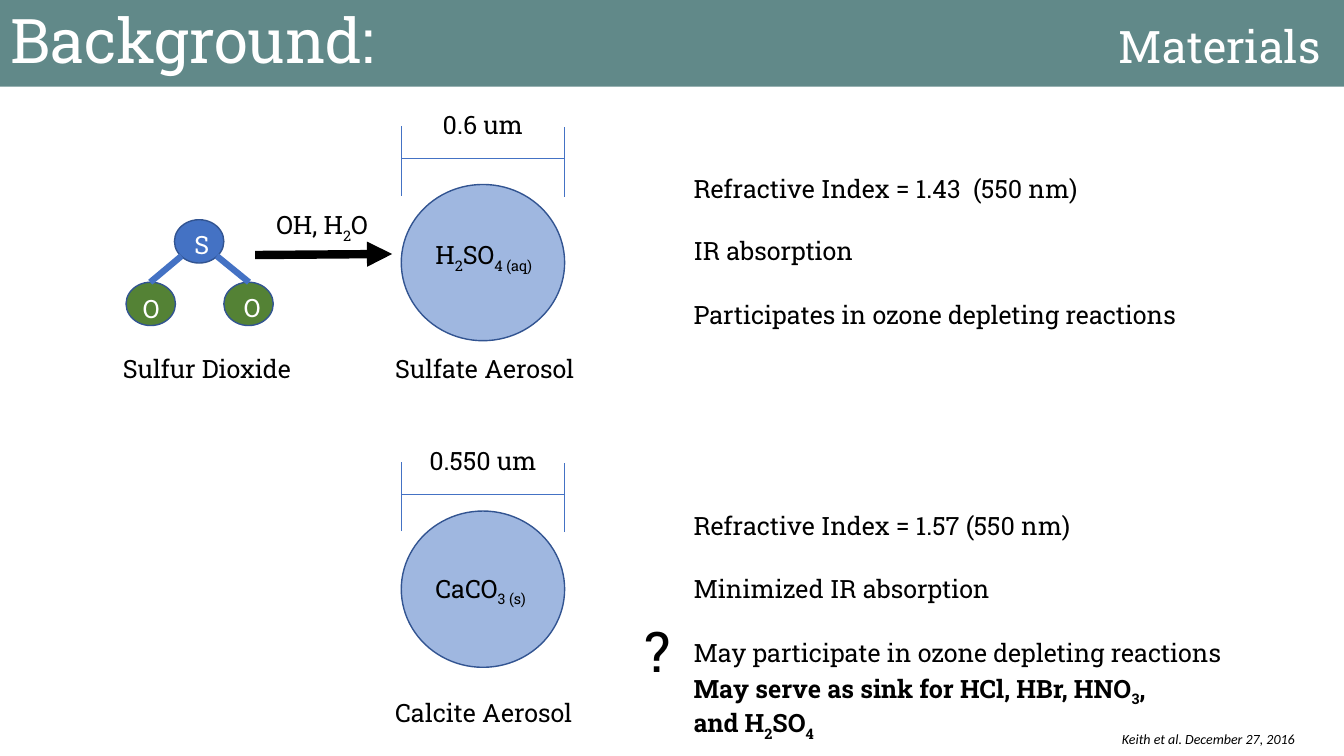
"""Build the slide comparing sulfate and calcite aerosol materials."""
from dataclasses import dataclass, field
from typing import Any

import lxml.etree
import pptx
import pptx.dml.color
import pptx.enum.dml
import pptx.enum.shapes
import pptx.enum.text
import pptx.oxml
import pptx.oxml.ns
import pptx.util

Inches = pptx.util.Inches
Align = pptx.enum.text.PP_ALIGN


@dataclass(frozen=True)
class Theme:
    """Colours, fonts and type sizes of the slide."""
    font: str = "Roboto Slab"
    source_font: str = "Calibri"
    black: str = "000000"
    white: str = "FFFFFF"
    banner: str = "004242"
    blue: str = "4472C4"
    outline: str = "325491"
    green: str = "548235"
    banner_opacity: int = 62
    particle_opacity: int = 51
    title_size: int = 44
    topic_size: int = 32
    body_size: int = 18
    question_size: int = 40
    source_size: int = 10


THEME = Theme()


@dataclass(frozen=True)
class Label:
    """A text box; parts between tildes are subscripts."""
    text: str
    left: float
    top: float
    width: float
    height: float = 0.4
    align: Any = Align.LEFT
    fill: str = ""
    format: dict[str, Any] = field(default_factory=dict)


@dataclass(frozen=True)
class Line:
    """A straight line between two points."""
    start: tuple[float, float]
    end: tuple[float, float]
    color: str
    width: float
    arrow: bool = False


@dataclass(frozen=True)
class Oval:
    """A filled ellipse with a thin outline."""
    left: float
    top: float
    width: float
    height: float
    fill: str
    opacity: int = 100


@dataclass(frozen=True)
class Particle:
    """An aerosol particle with its diameter, formula and name."""
    diameter: str
    dimension_top: float
    circle_top: float
    formula: str
    formula_top: float
    formula_width: float
    name: str
    name_top: float


@dataclass(frozen=True)
class Atom:
    """An atom of the sulfur dioxide molecule."""
    symbol: str
    left: float
    top: float
    fill: str
    text_left: float
    text_top: float


PARTICLES = [
    Particle("0.6 um", 1.04, 1.83, "H~2~SO~4 (aq)~", 2.33, 1.38, "Sulfate Aerosol", 3.46),
    Particle("0.550 um", 4.37, 5.07, "CaCO~3 (s)~", 5.64, 1.53, "Calcite Aerosol", 6.87),
]
ATOMS = [
    Atom("O", 1.25, 2.8, THEME.green, 1.32, 2.86),
    Atom("O", 2.22, 2.8, THEME.green, 2.32, 2.85),
    Atom("S", 1.73, 2.18, THEME.blue, 1.83, 2.23),
]
LINES = [
    Line((1.8, 2.54), (1.49, 2.8), THEME.blue, 4.5),
    Line((2.15, 2.54), (2.47, 2.8), THEME.blue, 4.5),
    Line((2.53, 2.53), (3.89, 2.52), THEME.black, 6, arrow=True),
]
PROPERTIES_LEFT = 6.78
LABELS = [
    Label("OH, H~2~O", 2.48, 2.03, 1.43, align=Align.CENTER),
    Label("Sulfur Dioxide", 1.12, 3.46, 2),
    Label("Refractive Index = 1.43  (550 nm)", PROPERTIES_LEFT, 1.67, 4.29),
    Label("IR absorption", PROPERTIES_LEFT, 2.29, 4.29),
    Label("Participates in ozone depleting reactions", PROPERTIES_LEFT, 2.92, 5.05),
    Label("Refractive Index = 1.57 (550 nm)", PROPERTIES_LEFT, 5.01, 3.98),
    Label("Minimized IR absorption", PROPERTIES_LEFT, 5.64, 4.29),
    Label("May participate in ozone depleting reactions", PROPERTIES_LEFT, 6.27, 5.45),
    Label("?", 6.29, 6.07, 0.38, 0.77, Align.CENTER, THEME.white,
          {"size": pptx.util.Pt(THEME.question_size)}),
    Label("May serve as sink for HCl, HBr, HNO~3~, and H~2~SO~4~",
          PROPERTIES_LEFT, 6.63, 5.05, 0.71, format={"bold": True}),
    Label("Keith et al. December 27, 2016", 11.03, 7.2, 2.3, 0.27,
          format={"size": pptx.util.Pt(THEME.source_size), "italic": True,
                  "name": THEME.source_font}),
]


def paint(fill: Any, color: str, opacity: int = 100) -> None:
    """Give a fill a solid colour with an optional opacity in percent."""
    fill.solid()
    fill.fore_color.rgb = pptx.dml.color.RGBColor.from_string(color)
    if opacity < 100:
        tint = fill._xPr.find(".//" + pptx.oxml.ns.qn("a:srgbClr"))
        lxml.etree.SubElement(tint, pptx.oxml.ns.qn("a:alpha"), val=str(opacity * 1000))


def add_span(para: Any, text: str, color: str, values: dict[str, Any]) -> Any:
    """Add a run in the theme font, changed by the given format values."""
    span = para.add_run()
    span.text = text
    base = {"name": THEME.font, "size": pptx.util.Pt(THEME.body_size)}
    for name, value in (base | values).items():
        setattr(span.font, name, value)
    span.font.color.rgb = pptx.dml.color.RGBColor.from_string(color)
    return span


def draw_label(page: Any, label: Label, color: str = THEME.black) -> None:
    """Draw a text box with its subscripts."""
    box = page.shapes.add_textbox(
        *map(Inches, (label.left, label.top, label.width, label.height)))
    if label.fill:
        paint(box.fill, label.fill)
    box.text_frame.word_wrap = True
    box.text_frame.auto_size = pptx.enum.text.MSO_AUTO_SIZE.SHAPE_TO_FIT_TEXT
    para = box.text_frame.paragraphs[0]
    para.alignment = label.align
    for index, part in enumerate(label.text.split("~")):
        if part:
            span = add_span(para, part, color, label.format)
            if index % 2:
                span.font._element.set("baseline", "-25000")


def draw_line(page: Any, line: Line) -> None:
    """Draw a straight connector, with an arrowhead if asked."""
    connector = page.shapes.add_connector(
        pptx.enum.shapes.MSO_CONNECTOR.STRAIGHT, *map(Inches, line.start + line.end))
    paint(connector.line.fill, line.color)
    connector.line.width = pptx.util.Pt(line.width)
    if line.arrow:
        lxml.etree.SubElement(connector.line._get_or_add_ln(),
                              pptx.oxml.ns.qn("a:tailEnd"), type="triangle")
    lxml.etree.SubElement(connector._element.spPr, pptx.oxml.ns.qn("a:effectLst"))


def draw_oval(page: Any, oval: Oval) -> None:
    """Draw an outlined ellipse."""
    shape = page.shapes.add_shape(
        pptx.enum.shapes.MSO_SHAPE.OVAL,
        *map(Inches, (oval.left, oval.top, oval.width, oval.height)))
    shape.shadow.inherit = False
    paint(shape.fill, oval.fill, oval.opacity)
    paint(shape.line.fill, THEME.outline)
    shape.line.width = pptx.util.Pt(1)


def draw_particle(page: Any, particle: Particle) -> None:
    """Draw a particle with its dimension lines and labels."""
    left, right, top = 3.98, 5.6, particle.dimension_top
    for start, end in (((left, top + 0.53), (right, top + 0.53)),
                       ((left, top + 0.9), (left, top + 0.21)),
                       ((right, top + 0.91), (right, top + 0.22))):
        draw_line(page, Line(start, end, THEME.blue, 0.5))
    draw_oval(page, Oval(left, particle.circle_top, right - left, 1.55,
                         THEME.blue, THEME.particle_opacity))
    draw_label(page, Label(particle.diameter, 4.1, top, 1.38, align=Align.CENTER))
    draw_label(page, Label(particle.formula, 4.22, particle.formula_top, particle.formula_width))
    draw_label(page, Label(particle.name, 3.82, particle.name_top, 2.37))


def draw_title(page: Any) -> None:
    """Format the title as a banner with the topic at a right tab stop."""
    title = page.shapes.title
    banner = {"left": 0, "top": 0, "width": Inches(13.33), "height": Inches(0.86)}
    for name, value in banner.items():
        setattr(title, name, value)
    paint(title.fill, THEME.banner, THEME.banner_opacity)
    frame = title.text_frame
    frame.auto_size = pptx.enum.text.MSO_AUTO_SIZE.NONE
    frame.vertical_anchor = pptx.enum.text.MSO_ANCHOR.MIDDLE
    para = frame.paragraphs[0]
    para.alignment = Align.LEFT
    para.line_spacing = 0.9
    stops = lxml.etree.SubElement(para._p.get_or_add_pPr(), pptx.oxml.ns.qn("a:tabLst"))
    lxml.etree.SubElement(stops, pptx.oxml.ns.qn("a:tab"), pos=str(Inches(13)), algn="r")
    for text, size in (("Background:\t", THEME.title_size), ("Materials", THEME.topic_size)):
        add_span(para, text, THEME.white, {"size": pptx.util.Pt(size)})


def main() -> None:
    """Build and save the deck."""
    deck = pptx.Presentation()
    deck.slide_width, deck.slide_height = Inches(13.33), Inches(7.5)
    page = deck.slides.add_slide(deck.slide_layouts[5])
    draw_title(page)
    for particle in PARTICLES:
        draw_particle(page, particle)
    for atom in ATOMS:
        draw_oval(page, Oval(atom.left, atom.top, 0.49, 0.43, atom.fill))
    for line in LINES:
        draw_line(page, line)
    for atom in ATOMS:
        draw_label(page, Label(atom.symbol, atom.text_left, atom.text_top, 0.3, 0.32,
                               Align.CENTER), THEME.white)
    for label in LABELS:
        draw_label(page, label)
    deck.save("out.pptx")


if __name__ == "__main__":
    main()
